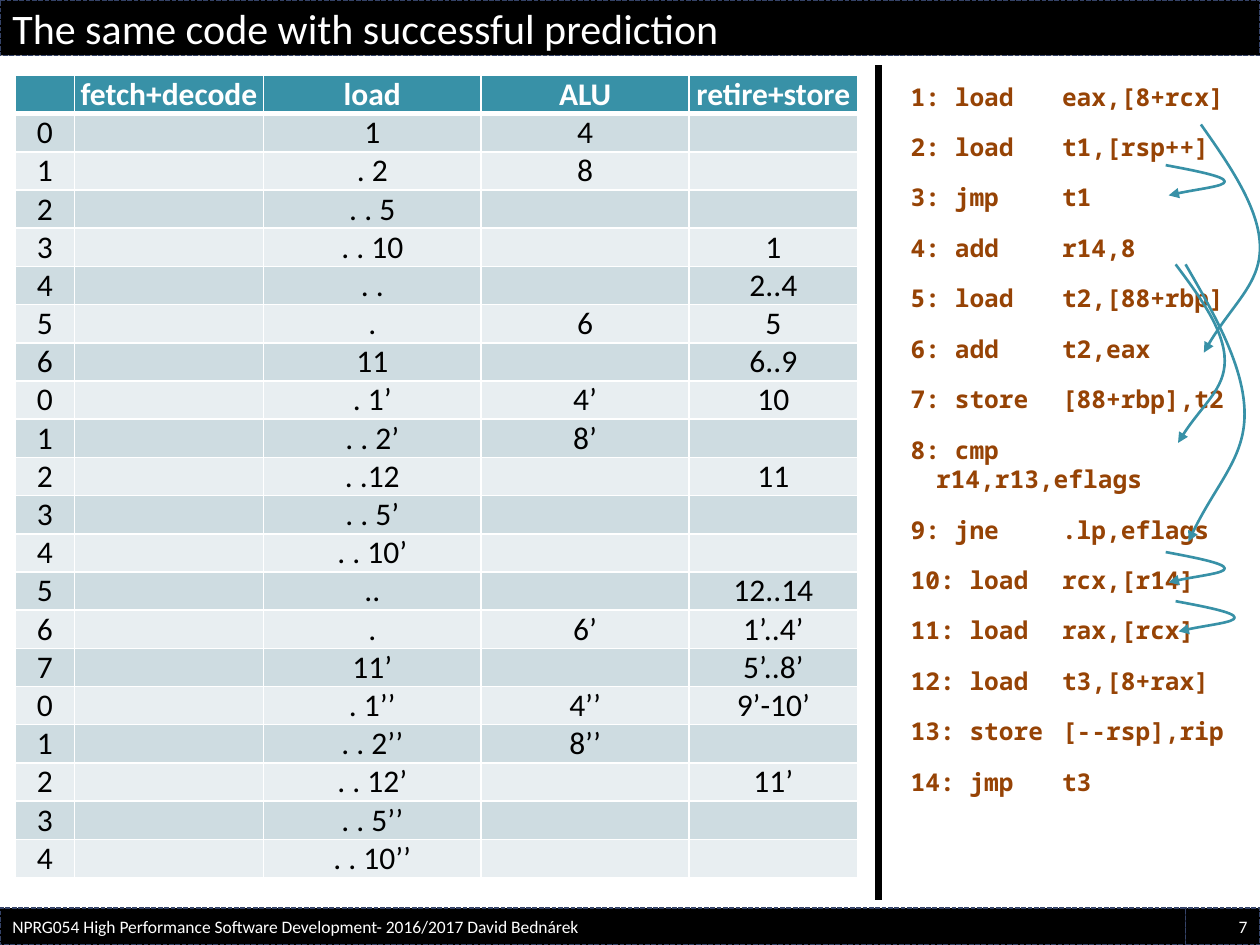
import pptx
import pptx.util
import pptx.dml.color
import pptx.enum.dml
import pptx.enum.shapes
import pptx.enum.text
import pptx.oxml
import pptx.oxml.ns

Cm, Pt = pptx.util.Cm, pptx.util.Pt
align = pptx.enum.text.PP_ALIGN
qn = pptx.oxml.ns.qn

# Content
# Bars: text, left, top, width, height, size, alignment
bars = [
    ("The same code with successful prediction", 0, 0, 25.4, 1.12, 24, align.LEFT),
    ("7", 23.9, 18.31, 1.5, 0.74, 10, align.RIGHT),
    ("NPRG054 High Performance Software Development- 2016/2017 David Bednárek",
     0, 18.31, 23.9, 0.74, 10, align.LEFT),
]
head = ("", "fetch+decode", "load", "ALU", "retire+store")
# Rows: cycle, load, ALU, retire+store
rows = [
    ("0", "1", "4", ""),
    ("1", ". 2", "8", ""),
    ("2", ". . 5", "", ""),
    ("3", ". . 10", "", "1"),
    ("4", ". .", "", "2..4"),
    ("5", ".", "6", "5"),
    ("6", "11", "", "6..9"),
    ("0", ". 1’", "4’", "10"),
    ("1", ". . 2’", "8’", ""),
    ("2", ". .12", "", "11"),
    ("3", ". . 5’", "", ""),
    ("4", ". . 10’", "", ""),
    ("5", "..", "", "12..14"),
    ("6", ".", "6’", "1’..4’"),
    ("7", "11’", "", "5’..8’"),
    ("0", ". 1’’", "4’’", "9’-10’"),
    ("1", ". . 2’’", "8’’", ""),
    ("2", ". . 12’", "", "11’"),
    ("3", ". . 5’’", "", ""),
    ("4", ". . 10’’", "", ""),
]
widths = (1.19, 3.81, 4.39, 4.19, 3.4)
code = [
    ("load", "eax,[8+rcx]"), ("load", "t1,[rsp++]"), ("jmp", "t1"),
    ("add", "r14,8"), ("load", "t2,[88+rbp]"), ("add", "t2,eax"),
    ("store", "[88+rbp],t2"), ("cmp", "r14,r13,eflags"),
    ("jne", ".lp,eflags"), ("load", "rcx,[r14]"), ("load", "rax,[rcx]"),
    ("load", "t3,[8+rax]"), ("store", "[--rsp],rip"), ("jmp", "t3"),
]
# Dependency arrows: left, top, width, height
arrows = [
    (23.5, 3.33, 1.19, 0.61), (23.7, 5.33, 0.99, 3.6),
    (24.21, 2.51, 1.19, 4.6), (23.9, 5.33, 1.19, 5.59),
    (23.5, 11.13, 1.19, 0.61), (23.7, 12.12, 1.19, 0.61),
]
# Start and two cubic curves, as shares of an arrow's box
bend = [(0, 0), (0.49, 0.18), (1, 0.37), (1, 0.54), (1, 0.7), (0.47, 0.8), (0.05, 1)]


def tint(text):
    return pptx.dml.color.RGBColor.from_string(text)


def paint(part, shade):
    part.fill.solid()
    part.fill.fore_color.rgb = tint(shade)


def style(para, size, shade, face="Calibri", bold=False):
    for run in para.runs:
        font = run.font
        font.size, font.name, font.bold = Pt(size), face, bold
        font.color.rgb = tint(shade)


def edge(cell, sides):
    """Give a cell white borders; sides holds the widths of L, R, T, B."""
    props = cell._tc.get_or_add_tcPr()
    for spot, (side, width) in enumerate(zip("LRTB", sides)):
        props.insert(spot, pptx.oxml.parse_xml(
            f'<a:ln{side} {pptx.oxml.ns.nsdecls("a")} w="{Pt(width)}"><a:solidFill>'
            f'<a:srgbClr val="FFFFFF"/></a:solidFill></a:ln{side}>'))


def arrow(left, top, width, height):
    spots = [(Cm(left + x * width), Cm(top + y * height)) for x, y in bend]
    build = shapes.build_freeform(*spots[0], scale=1.0)
    build.add_line_segments(spots[1:], close=False)
    shape = build.convert_to_shape()
    shape.shadow.inherit = False
    shape.fill.background()
    shape.line.color.rgb = tint("3891A7")
    shape.line.width = Pt(1.5)
    # Join each three points into one curve
    legs = list(shape._element.iter(qn("a:lnTo")))
    for first in range(0, len(legs), 3):
        curve = legs[first].getparent().makeelement(qn("a:cubicBezTo"), {})
        legs[first].addprevious(curve)
        for leg in legs[first:first + 3]:
            curve.append(leg[0])
            leg.getparent().remove(leg)
    line = shape.line._get_or_add_ln()
    line.append(line.makeelement(qn("a:tailEnd"), {"type": "triangle"}))


deck = pptx.Presentation()
deck.slide_width, deck.slide_height = Cm(25.4), Cm(19.05)
slide = deck.slides.add_slide(deck.slide_layouts[6])
shapes = slide.shapes

# Divider
rule = shapes.add_connector(pptx.enum.shapes.MSO_CONNECTOR.STRAIGHT,
                            Cm(17.7), Cm(1.32), Cm(17.7), Cm(18.14))
rule.line.color.rgb = tint("000000")
rule.line.width = Pt(4)
props = rule._element.spPr
props.append(props.makeelement(qn("a:effectLst"), {}))

# Code listing
frame = shapes.add_textbox(Cm(18.11), Cm(1.52), Cm(7.01), Cm(16.41)).text_frame
frame.word_wrap = True
frame.text = "\n".join(f"{n}: {op}\t{args}" for n, (op, args) in enumerate(code, 1))
for para in frame.paragraphs:
    para.space_before = para.space_after = Pt(6)
    para.line_spacing = Pt(16.8)
    props = para._p.get_or_add_pPr()
    for key, size in (("marL", 0.51), ("indent", -0.51), ("defTabSz", 2.54)):
        props.set(key, str(Cm(size)))
    style(para, 14, "964305", "Noto Sans Mono", True)

# Pipeline table
lines = [head] + [(time, "", *rest) for time, *rest in rows]
table = shapes.add_table(len(lines), len(head), Cm(0.31), Cm(1.52),
                         Cm(sum(widths)), Cm(0.77 * len(lines))).table
table.first_row = table.horz_banding = False
for col, width in zip(table.columns, widths):
    col.width = Cm(width)
for r, line in enumerate(lines):
    table.rows[r].height = Cm(0.77)
    for c, text in enumerate(line):
        cell = table.cell(r, c)
        cell.margin_left = cell.margin_right = cell.margin_top = cell.margin_bottom = 0
        cell.vertical_anchor = pptx.enum.text.MSO_ANCHOR.MIDDLE
        paint(cell, "3891A7" if r == 0 else "CEDCE1" if r % 2 else "E8EEF1")
        edge(cell, (1, 1, 3 if r == 1 else 1, 3 if r == 0 else 1))
        cell.text_frame.text = text
        para = cell.text_frame.paragraphs[0]
        para.alignment = align.CENTER
        style(para, 18, "000000" if r else "FFFFFF", bold=r == 0)

# Title and footer bars
for text, left, top, width, height, size, side in bars:
    bar = shapes.add_shape(pptx.enum.shapes.MSO_SHAPE.RECTANGLE,
                           Cm(left), Cm(top), Cm(width), Cm(height))
    bar.shadow.inherit = False
    paint(bar, "000000")
    bar.line.color.rgb = tint("354368")
    bar.line.width = Pt(0.9)
    bar.line.dash_style = pptx.enum.dml.MSO_LINE.SQUARE_DOT
    frame = bar.text_frame
    frame.word_wrap = True
    frame.vertical_anchor = pptx.enum.text.MSO_ANCHOR.MIDDLE
    frame.text = text
    frame.paragraphs[0].alignment = side
    style(frame.paragraphs[0], size, "FFFFFF")

# Dependencies
for box in arrows:
    arrow(*box)

deck.save("out.pptx")
